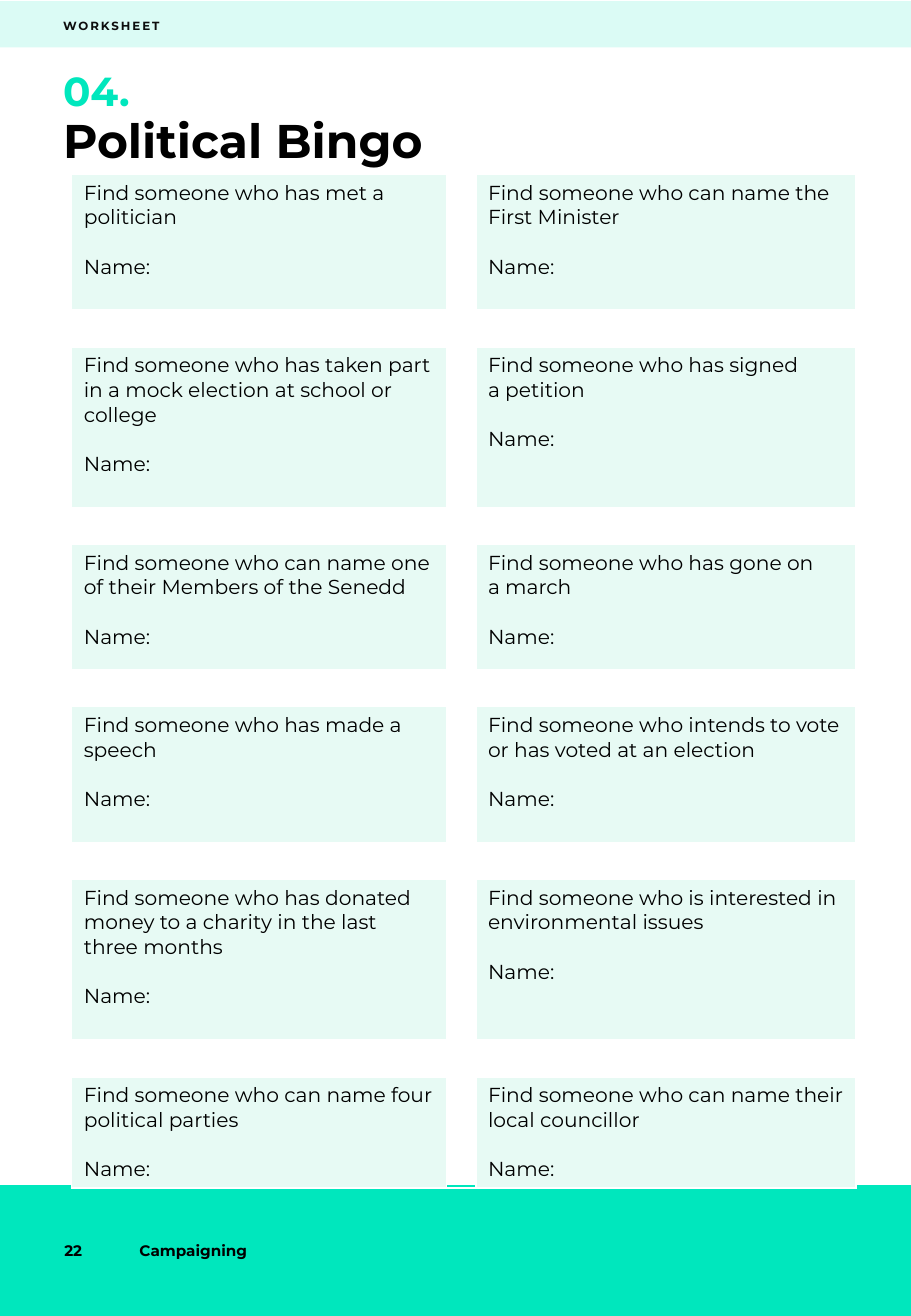
from dataclasses import dataclass

from lxml import etree
from pptx import Presentation
from pptx import util as u
from pptx.dml.color import RGBColor as Rgb
from pptx.enum import shapes, text
from pptx.oxml import ns


@dataclass(frozen=True)
class Theme:
    face: str = "Montserrat"
    mint: str = "00E7BD"
    pale: str = "E7FAF4"
    ink: str = "000000"
    soft: str = "0D0D0D"
    white: str = "FFFFFF"
    title: float = 28
    count: float = 24
    card: float = 12
    foot: float = 9
    tag: float = 7


theme = Theme()


def write(frame, words, size, color=theme.ink, bold=False, gap=0,
          lead=None, track=None):
    """Set one paragraph per line; gap is the space before the last one."""
    lines = words.split("\n")
    for n, line in enumerate(lines):
        para = frame.paragraphs[0] if n == 0 else frame.add_paragraph()
        if lead:
            para.line_spacing = lead
        if n and n == len(lines) - 1:
            para.space_before = u.Pt(gap)
        run = para.add_run()
        run.text = line
        font = run.font
        font.name, font.size, font.bold = theme.face, u.Pt(size), bold
        font.color.rgb = Rgb.from_string(color)
        if track:
            font._element.set("spc", str(track))


deck = Presentation()
deck.slide_width, deck.slide_height = u.Pt(540), u.Pt(780.13)
slide = deck.slides.add_slide(deck.slide_layouts[6])

# Footer and header bands
for top, high, alpha in [(702.6, 77.5, 100), (0.7, 27.4, 14)]:
    band = slide.shapes.add_shape(shapes.MSO_SHAPE.RECTANGLE, 0, u.Pt(top),
                                  deck.slide_width, u.Pt(high))
    band.shadow.inherit = False
    band.line.fill.background()
    band.fill.solid()
    band.fill.fore_color.rgb = Rgb.from_string(theme.mint)
    if alpha < 100:
        tint = band._element.spPr.find(".//" + ns.qn("a:srgbClr"))
        etree.SubElement(tint, ns.qn("a:alpha"), val=str(alpha * 1000))

# Bingo cards, two to a row, with empty rows between
cards = [
    ("Find someone who has met a\npolitician",
     "Find someone who can name the\nFirst Minister"),
    ("Find someone who has taken part in a mock election at school or college",
     "Find someone who has signed\na petition"),
    ("Find someone who can name one of their Members of the Senedd",
     "Find someone who has gone on\na march"),
    ("Find someone who has made a speech",
     "Find someone who intends to vote\nor has voted at an election"),
    ("Find someone who has donated\nmoney to a charity in the last\nthree months",
     "Find someone who is interested in\nenvironmental issues"),
    ("Find someone who can name four\npolitical parties",
     "Find someone who can name their\nlocal councillor"),
]
wide = [222.3, 17.3, 225.4]
high = [80.4, 95, 74.2, 80.4, 95, 65.7]
space = 21.9
rows = 2 * len(cards) - 1
total = sum(high) + space * (len(cards) - 1)
grid = slide.shapes.add_table(rows, len(wide), u.Pt(42.5), u.Pt(103.4),
                              u.Pt(sum(wide)), u.Pt(total)).table
grid.first_row = grid.horz_banding = False
for col, width in zip(grid.columns, wide):
    col.width = u.Pt(width)
for r, row in enumerate(grid.rows):
    row.height = u.Pt(space if r % 2 else high[r // 2])
    for c, cell in enumerate(row.cells):
        props = cell._tc.get_or_add_tcPr()
        for side in ("lnL", "lnR", "lnT", "lnB"):
            edge = etree.SubElement(props, ns.qn("a:" + side),
                                    w=str(u.Pt(1)))
            fill = etree.SubElement(edge, ns.qn("a:solidFill"))
            etree.SubElement(fill, ns.qn("a:srgbClr"), val=theme.white)
        if r % 2 or c == 1:
            cell.fill.background()
            cell.margin_top = cell.margin_bottom = 0
        else:
            cell.fill.solid()
            cell.fill.fore_color.rgb = Rgb.from_string(theme.pale)
            write(cell.text_frame, cards[r // 2][c // 2] + "\nName:",
                  theme.card, gap=14.6)

# Headings and footer text: words, left, top, width, height, inset, middle, format
labels = [
    ("Political Bingo", 37.4, 69.8, 465, 63.4, 0, False,
     dict(size=theme.title, lead=0.9)),
    ("04.", 37.4, 38.9, 465, 26.6, 0, False,
     dict(size=theme.count, color=theme.mint)),
    ("WORKSHEET", 37.4, 5, 194.4, 20.2, 0, True,
     dict(size=theme.tag, color=theme.soft, track=120)),
    ("22", 31, 702.6, 44.6, 77.5, 7.2, True, dict(size=theme.foot)),
    ("Campaigning", 75.6, 702.6, 199.4, 77.5, 7.2, True,
     dict(size=theme.foot)),
]
for words, left, top, width, tall, inset, middle, form in labels:
    box = slide.shapes.add_textbox(u.Pt(left), u.Pt(top), u.Pt(width),
                                   u.Pt(tall))
    frame = box.text_frame
    frame.word_wrap = True
    frame.margin_left = frame.margin_right = u.Pt(inset)
    frame.margin_top = frame.margin_bottom = 0
    frame.vertical_anchor = (text.MSO_ANCHOR.MIDDLE if middle
                             else text.MSO_ANCHOR.TOP)
    write(frame, words, bold=True, **form)

deck.save("out.pptx")
